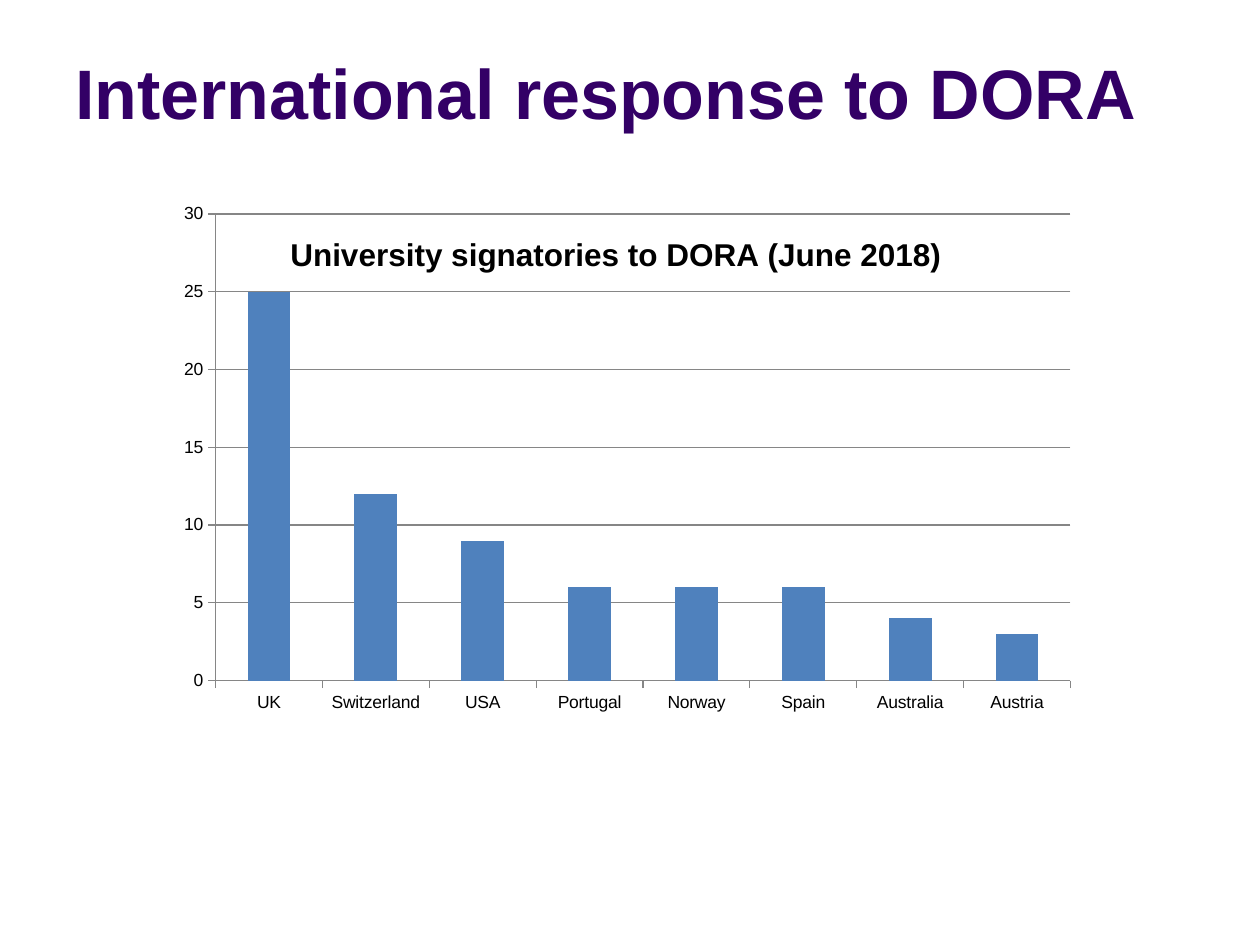
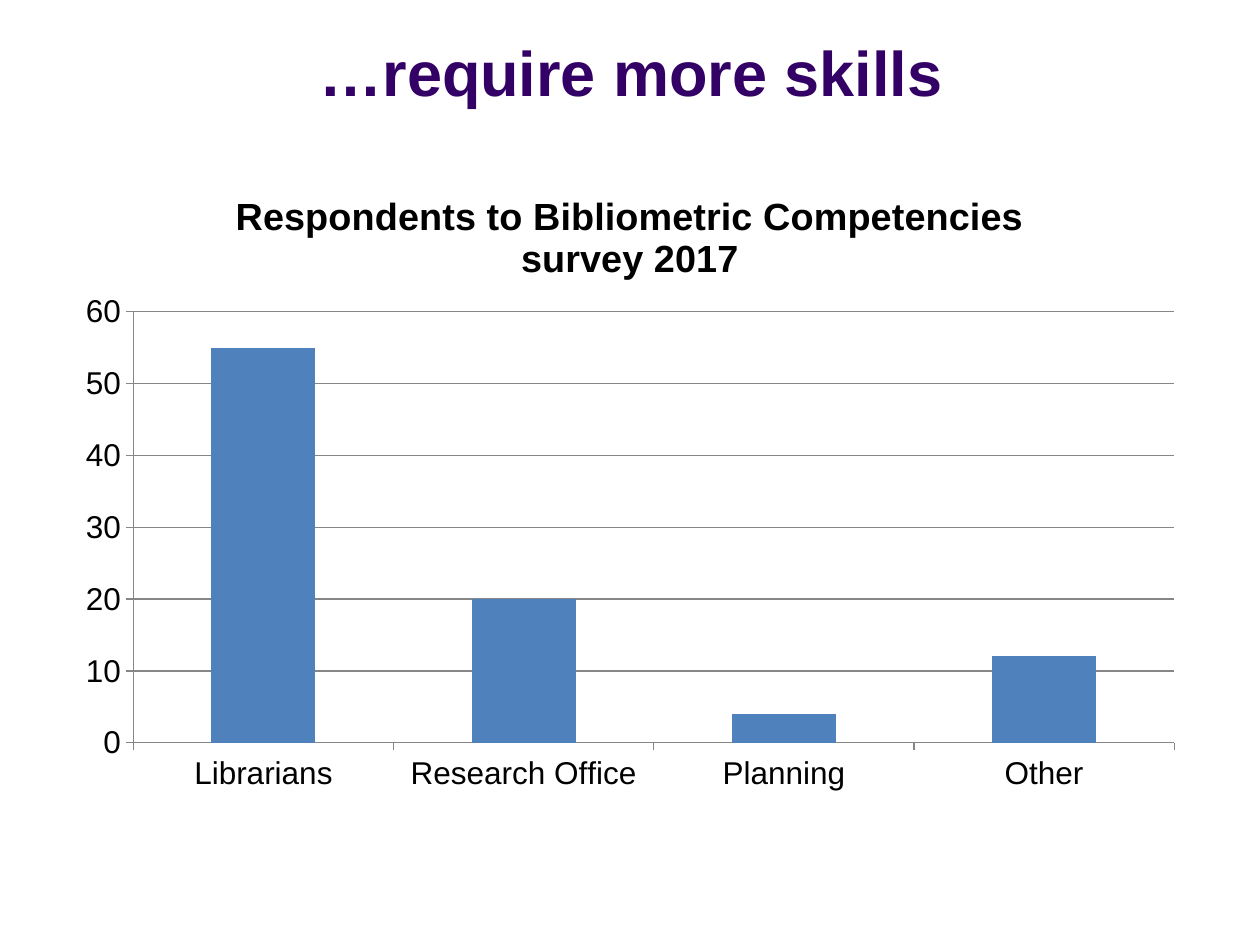
import pptx
import pptx.chart.data
import pptx.dml.color
import pptx.enum.chart
import pptx.enum.text
import pptx.oxml
import pptx.oxml.ns
import pptx.util

WIDTH, HEIGHT = 10, 7.5
FONT = "Arial"
PURPLE, BLACK, BLUE, GREY = "330066", "000000", "4F81BD", "868686"
LEFT = pptx.enum.text.PP_ALIGN.LEFT
CENTER = pptx.enum.text.PP_ALIGN.CENTER


def color(value):
    return pptx.dml.color.RGBColor.from_string(value)


def place(x, y, w, h):
    shares = ((x, WIDTH), (y, HEIGHT), (w, WIDTH), (h, HEIGHT))
    return [pptx.util.Inches(share * side) for share, side in shares]


def style_font(font, size, value, bold=False):
    font.name = FONT
    font.size = pptx.util.Pt(size)
    font.bold = bold
    font.color.rgb = color(value)


def style_line(line):
    line.color.rgb = color(GREY)
    line.width = pptx.util.Pt(0.75)


def add_title(s, text, box, size, align):
    tf = s.shapes.add_textbox(*place(*box)).text_frame
    tf.word_wrap = True
    tf.vertical_anchor = pptx.enum.text.MSO_ANCHOR.MIDDLE
    tf.text = text
    p = tf.paragraphs[0]
    p.alignment = align
    style_font(p.runs[0].font, size, PURPLE, True)


def set_layout(parent, index, target="", **shares):
    qn = pptx.oxml.ns.qn
    for old in parent.findall(qn("c:layout")):
        parent.remove(old)
    inner = f'<c:layoutTarget val="{target}"/>' if target else ""
    modes = "".join(f'<c:{key}Mode val="edge"/>' for key in "xy")
    values = "".join(f'<c:{key} val="{value}"/>' for key, value in shares.items())
    namespace = pptx.oxml.ns.nsdecls("c")
    parent.insert(index, pptx.oxml.parse_xml(
        f"<c:layout {namespace}><c:manualLayout>{inner}{modes}{values}"
        "</c:manualLayout></c:layout>"))


def style_axis(axis, size):
    axis.major_tick_mark = pptx.enum.chart.XL_TICK_MARK.OUTSIDE
    axis.minor_tick_mark = pptx.enum.chart.XL_TICK_MARK.NONE
    style_line(axis.format.line)
    style_font(axis.tick_labels.font, size, BLACK)


def add_column_chart(s, box, title, title_size, label_size, counts, step, plot_box):
    data = pptx.chart.data.CategoryChartData()
    data.categories = list(counts)
    data.add_series("Series 1", list(counts.values()))
    chart = s.shapes.add_chart(
        pptx.enum.chart.XL_CHART_TYPE.COLUMN_CLUSTERED, *place(*box), data).chart
    style_font(chart.font, label_size, BLACK)
    chart.has_legend = False

    chart.has_title = True
    tf = chart.chart_title.text_frame
    tf.text = title
    style_font(tf.paragraphs[0].runs[0].font, title_size, BLACK, True)

    plot = chart.plots[0]
    plot.vary_by_categories = False
    plot.gap_width = 150
    fill = plot.series[0].format.fill
    fill.solid()
    fill.fore_color.rgb = color(BLUE)

    style_axis(chart.category_axis, label_size)
    axis = chart.value_axis
    style_axis(axis, label_size)
    axis.minimum_scale, axis.maximum_scale, axis.major_unit = 0, 6 * step, step
    axis.has_major_gridlines = True
    style_line(axis.major_gridlines.format.line)
    set_layout(chart._chartSpace.chart.plotArea, 0, "inner",
               **dict(zip("xywh", plot_box)))
    return chart


def add_dora_slide(s):
    add_title(s, "International response to DORA", (0.05, 0.04, 0.9, 0.113), 40, LEFT)
    signatories = {"UK": 25, "Switzerland": 12, "USA": 9, "Portugal": 6,
                   "Norway": 6, "Spain": 6, "Australia": 4, "Austria": 3}
    chart = add_column_chart(
        s, (0.122, 0.216, 0.732, 0.556), "University signatories to DORA (June 2018)",
        18, 10, signatories, 5, (0.067, 0.018, 0.927, 0.889))
    chart.chart_title.include_in_layout = True
    set_layout(chart.chart_title._element, 1, x=0.142, y=0.046)


def add_skills_slide(s):
    add_title(s, "…require more skills", (0.051, 0.028, 0.9, 0.095), 36, CENTER)
    respondents = {"Librarians": 55, "Research Office": 20, "Planning": 4, "Other": 12}
    add_column_chart(
        s, (0.05, 0.175, 0.9, 0.676),
        "Respondents to Bibliometric Competencies survey 2017",
        21.6, 18, respondents, 10, (0.062, 0.229, 0.918, 0.675))


def main():
    prs = pptx.Presentation()
    prs.slide_width = pptx.util.Inches(WIDTH)
    prs.slide_height = pptx.util.Inches(HEIGHT)
    for build in (add_dora_slide, add_skills_slide):
        build(prs.slides.add_slide(prs.slide_layouts[6]))
    prs.save("out.pptx")


if __name__ == "__main__":
    main()
